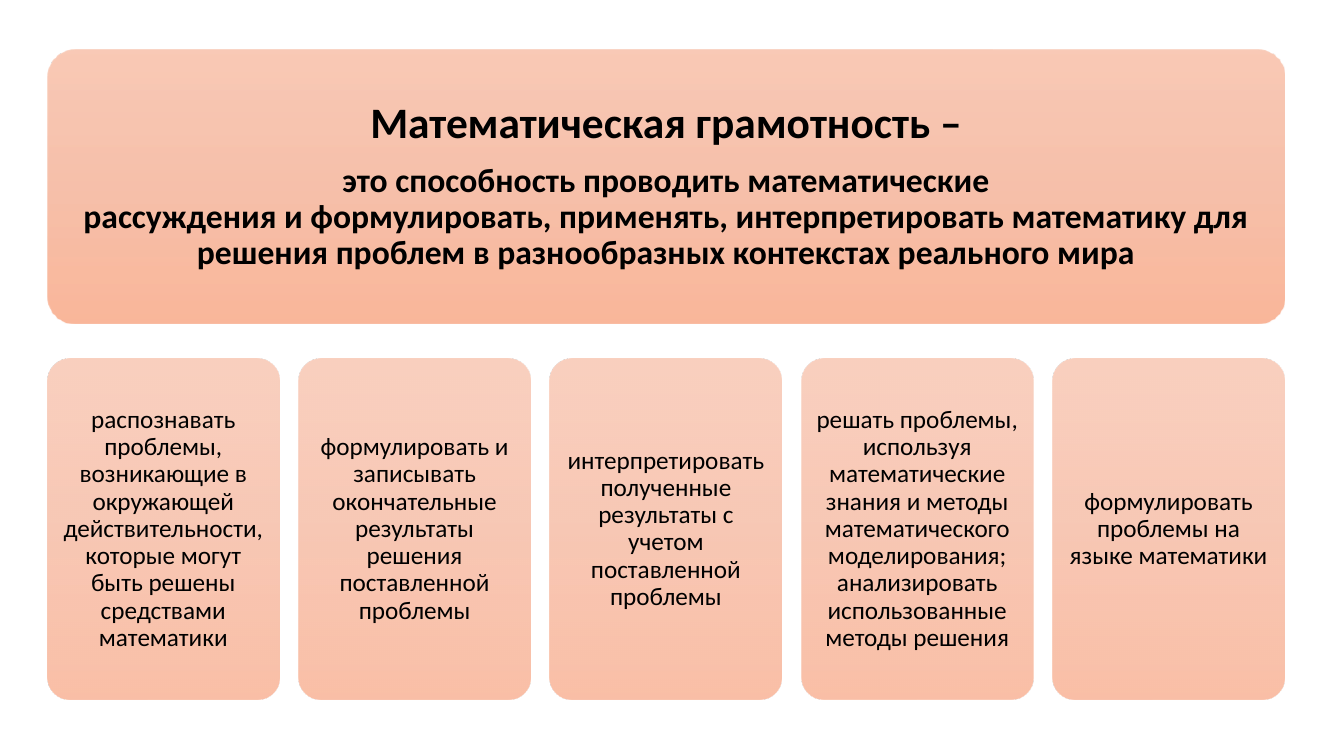
from lxml import etree
from pptx import Presentation
from pptx.dml.color import RGBColor
from pptx.enum.shapes import MSO_SHAPE
from pptx.enum.text import MSO_ANCHOR, MSO_AUTO_SIZE, PP_ALIGN
from pptx.oxml.ns import qn
from pptx.util import Inches, Pt

ROUNDED = MSO_SHAPE.ROUNDED_RECTANGLE
MIDDLE = MSO_ANCHOR.MIDDLE
CENTER = PP_ALIGN.CENTER
NO_AUTOFIT = MSO_AUTO_SIZE.NONE
TITLE_ONLY = 5

COLORS = {"text": "000000", "top": "F7BDA5", "middle": "F5B196", "bottom": "F8A582"}
GRADIENT = [(0, "top"), (50, "middle"), (100, "bottom")]

LEFT, WIDTH = 0.47, 12.27
SKILL_WIDTH = 2.3

HEADING = "Математическая грамотность –"
DEFINITION = [
    "это способность проводить математические",
    "рассуждения и формулировать, применять, интерпретировать математику для",
    "решения проблем в разнообразных контекстах реального мира",
]
SKILLS = [
    ["распознавать проблемы, возникающие в окружающей действительности, "
     "которые могут быть решены средствами математики"],
    ["формулировать и записывать окончательные результаты решения поставленной проблемы"],
    ["интерпретировать полученные результаты с учетом поставленной проблемы"],
    ["решать проблемы, используя математические знания и методы математического моделирования;",
     "анализировать использованные методы решения"],
    ["формулировать проблемы на языке математики"],
]


class SlideBuilder:
    font = "Calibri"

    def __init__(self, slide):
        self.slide = slide

    def set_text(self, frame, lines, size, bold, margin, margin_top):
        frame.word_wrap = True
        frame.auto_size = NO_AUTOFIT
        frame.vertical_anchor = MIDDLE
        frame.margin_left = frame.margin_right = frame.margin_bottom = Inches(margin)
        frame.margin_top = Inches(margin_top)
        paragraph = frame.paragraphs[0]
        paragraph.alignment = CENTER
        paragraph.line_spacing = 0.9
        paragraph.space_before = Pt(0)
        for index, line in enumerate(lines):
            if index:
                paragraph.add_line_break()
            run = paragraph.add_run()
            run.text = line
            run.font.name = self.font
            run.font.size = Pt(size)
            run.font.bold = bold
            run.font.color.rgb = RGBColor.from_string(COLORS["text"])

    def shade(self, card, opacity):
        card.fill.gradient()
        card.fill.gradient_angle = 270
        stops = card._element.spPr.find(qn("a:gradFill")).find(qn("a:gsLst"))
        for stop in list(stops):
            stops.remove(stop)
        for position, name in GRADIENT:
            stop = etree.SubElement(stops, qn("a:gs"), pos=str(position * 1000))
            color = etree.SubElement(stop, qn("a:srgbClr"), val=COLORS[name])
            etree.SubElement(color, qn("a:alpha"), val=str(opacity * 1000))

    def card(self, left, top, width, height, lines, size, opacity,
             bold=False, margin=0.07, margin_top=0.07):
        card = self.slide.shapes.add_shape(
            ROUNDED, Inches(left), Inches(top), Inches(width), Inches(height))
        card.adjustments[0] = 0.1
        card.shadow.inherit = False
        card.line.fill.background()
        self.shade(card, opacity)
        self.set_text(card.text_frame, lines, size, bold, margin, margin_top)

    def title(self, left, top, width, height, text, size):
        heading = self.slide.shapes.title
        heading.left, heading.top = Inches(left), Inches(top)
        heading.width, heading.height = Inches(width), Inches(height)
        self.set_text(heading.text_frame, [text], size, True, 0, 0)
        self.slide.shapes._spTree.append(heading._element)


def main():
    deck = Presentation()
    deck.slide_width, deck.slide_height = Inches(13.33), Inches(7.5)
    builder = SlideBuilder(deck.slides.add_slide(deck.slide_layouts[TITLE_ONLY]))

    builder.card(LEFT, 0.49, WIDTH, 2.72, DEFINITION, 24, 80,
                 bold=True, margin=0.13, margin_top=0.75)
    builder.title(LEFT, 0.93, WIDTH, 0.6, HEADING, 31)

    pitch = (WIDTH - SKILL_WIDTH) / (len(SKILLS) - 1)
    for index, skill in enumerate(SKILLS):
        builder.card(LEFT + index * pitch, 3.56, SKILL_WIDTH, 3.38, skill, 18, 70)

    deck.save("out.pptx")


if __name__ == "__main__":
    main()
